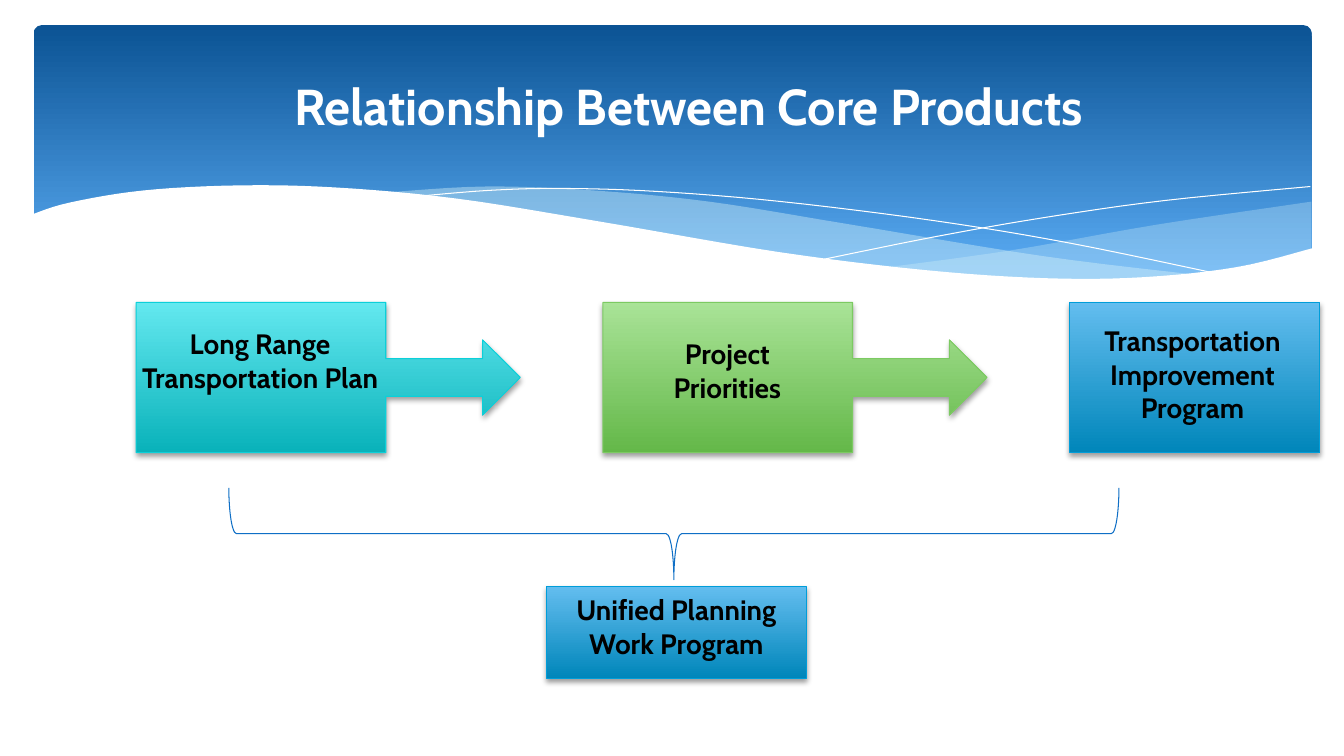
from lxml import etree
from pptx import Presentation
from pptx import util as u
from pptx.dml.color import RGBColor
from pptx.enum import shapes, text
from pptx.oxml.ns import qn

W, H = u.Inches(13.333), u.Inches(7.5)
HUES = {
    "white": "FFFFFF", "black": "000000", "veil": "DBF5F9", "brace": "0F6FC6",
    "banner": ("0B5394", "59AAF2"),
    "teal": ("63E8EF", "09B2BA", "0BD0D9"),
    "green": ("A9E397", "64B849", "7CCA62"),
    "blue": ("63BDEF", "0086BA", "009DD9"),
}
KIND = shapes.MSO_SHAPE
FONT = {"name": "Cabin", "bold": True}

# Outlines of the waves, as percent of the slide's width and height.
RIGHT_VEIL = (
    [(97.58, 26.67), (86.03, 29.73), (75.38, 33.07), (66.15, 35.33)],
    [(66.15, 35.33), (73.2, 36.53), (80.33, 37.07), (86.33, 36.67),
     (92.1, 35.33), (97.58, 32.93)],
)
LEFT_VEIL = (
    [(89.25, 36.4), (77.55, 33.87), (62.93, 29.6), (52.73, 26.67),
     (44.18, 25.2), (36.15, 24.67), (28.65, 25.47)],
    [(28.65, 25.47), (36.23, 27.07), (44.93, 29.6), (56.63, 33.07),
     (66.53, 35.47), (74.85, 36.8), (81.75, 37.07), (89.25, 36.4)],
)
LEFT_LINE = [(30.9, 26), (36.3, 25.2), (41.63, 24.93), (48.9, 25.33),
             (58.13, 26.67), (69.53, 29.2), (79.5, 32.13), (90.75, 36.27)]
RIGHT_LINE = [(61.35, 34.27), (69.53, 31.33), (77.63, 28.8),
              (86.63, 26.53), (97.5, 24.67)]
EDGE = [(97.73, 32.8), (92.03, 35.33), (85.05, 36.67), (77.78, 36.8),
        (68.85, 35.73), (57.9, 33.33), (44.7, 29.33), (33.98, 26.27),
        (24.98, 24.8), (17.63, 24.53), (10.65, 25.2), (5.18, 26.8),
        (2.33, 28.4)]
BASE = [(2.33, 43.87), (97.73, 43.87)]


def place(x, y):
    """Turn percent of the slide into lengths."""
    return round(W * x / 100), round(H * y / 100)


def rgb(hue):
    return RGBColor.from_string(hue)


def bend(knots, steps=6):
    """Sample a smooth curve through the knots."""
    ends = [knots[0], *knots, knots[-1]]
    dots = [knots[0]]
    for a, b, c, d in zip(ends, ends[1:], ends[2:], ends[3:]):
        for n in range(1, steps + 1):
            t = n / steps
            dots.append(tuple(
                q + t / 2 * (r - p + t * (2 * p - 5 * q + 4 * r - s
                                          + t * (3 * (q - r) + s - p)))
                for p, q, r, s in zip(a, b, c, d)))
    return dots


def fade(shape, top, base, end=1):
    shape.fill.gradient()
    shape.fill.gradient_angle = 270
    for stop, hue, spot in zip(shape.fill.gradient_stops, (top, base), (0, end)):
        stop.color.rgb = rgb(hue)
        stop.position = spot


def shade(shape):
    """Give the shape a soft shadow below it."""
    effect = shape._element.spPr.find(qn("a:effectLst"))
    drop = etree.SubElement(effect, qn("a:outerShdw"), blurRad=str(u.Pt(4)),
                            dist=str(u.Pt(2)), dir="5400000", rotWithShape="0")
    tone = etree.SubElement(drop, qn("a:srgbClr"), val=HUES["black"])
    etree.SubElement(tone, qn("a:alpha"), val="38000")


def add_form(slide, kind, box):
    shape = slide.shapes.add_shape(kind, *place(*box[:2]), *place(*box[2:]))
    shape.shadow.inherit = False
    return shape


def draw(slide, dots, closed):
    first, *rest = [place(*dot) for dot in dots]
    pen = slide.shapes.build_freeform(*first, scale=1.0)
    pen.add_line_segments(rest, close=closed)
    shape = pen.convert_to_shape()
    shape.shadow.inherit = False
    return shape


def add_wave(slide, dots, hue, alpha=100):
    wave = draw(slide, dots, True)
    wave.fill.solid()
    wave.fill.fore_color.rgb = rgb(hue)
    wave.line.fill.background()
    if alpha < 100:
        tone = wave._element.spPr.find(qn("a:solidFill"))[0]
        etree.SubElement(tone, qn("a:alpha"), val=str(alpha * 1000))


def add_curve(slide, knots):
    curve = draw(slide, bend(knots), False)
    curve.fill.background()
    curve.line.color.rgb = rgb(HUES["white"])
    curve.line.width = 0


def add_block(slide, kind, box, hues):
    block = add_form(slide, kind, box)
    fade(block, *hues[:2])
    block.line.color.rgb = rgb(hues[2])
    block.line.width = u.Pt(0.75)
    shade(block)


def add_label(slide, words, box, size=20, hue="black",
              anchor=text.MSO_ANCHOR.TOP):
    label = slide.shapes.add_textbox(*place(*box[:2]), *place(*box[2:]))
    frame = label.text_frame
    frame.word_wrap = True
    frame.vertical_anchor = anchor
    line = frame.paragraphs[0]
    line.alignment = text.PP_ALIGN.CENTER
    run = line.add_run()
    run.text = words
    for key, value in {**FONT, "size": u.Pt(size)}.items():
        setattr(run.font, key, value)
    run.font.color.rgb = rgb(HUES[hue])


def add_banner(slide):
    banner = add_form(slide, KIND.ROUNDED_RECTANGLE, (2.5, 3.33, 95.1, 36))
    banner.adjustments[0] = 0.03
    fade(banner, *HUES["banner"], end=0.9)
    banner.line.fill.background()
    for halves, alpha in ((RIGHT_VEIL, 29), (LEFT_VEIL, 40)):
        dots = [dot for half in halves for dot in bend(half)]
        add_wave(slide, dots, HUES["veil"], alpha)
    for knots in (LEFT_LINE, RIGHT_LINE):
        add_curve(slide, knots)
    add_wave(slide, bend(EDGE) + BASE, HUES["white"])


def add_brace(slide):
    brace = add_form(slide, KIND.LEFT_BRACE, (46.73, 11.73, 6.83, 117.73))
    brace.rotation = 270
    brace.fill.background()
    brace.line.color.rgb = rgb(HUES["brace"])
    brace.line.width = u.Pt(0.75)


def main():
    deck = Presentation()
    deck.slide_width, deck.slide_height = W, H
    slide = deck.slides.add_slide(deck.slide_layouts[6])
    add_banner(slide)
    add_label(slide, "Relationship Between Core Products",
              (13.73, 5.6, 75, 16.67), 36, "white", text.MSO_ANCHOR.MIDDLE)

    call = KIND.RIGHT_ARROW_CALLOUT
    steps = (
        (call, 28.58, "teal", "Long Range Transportation Plan",
         (9.38, 42.53, 19.95, 14.8)),
        (call, 28.58, "green", "Project Priorities",
         (46.13, 43.87, 15.98, 10.27)),
        (KIND.RECTANGLE, 18.6, "blue", "Transportation Improvement Program",
         (80.1, 42.13, 17.25, 19.33)),
    )
    for n, (kind, wide, hue, words, box) in enumerate(steps):
        add_block(slide, kind, (10.13 + 34.73 * n, 40, wide, 19.87), HUES[hue])
        add_label(slide, words, box)

    add_block(slide, KIND.RECTANGLE, (40.65, 77.6, 19.35, 12.13), HUES["blue"])
    add_label(slide, "Unified Planning Work Program",
              (40.65, 77.73, 19.35, 10.27))
    add_brace(slide)
    deck.save("out.pptx")


if __name__ == "__main__":
    main()
